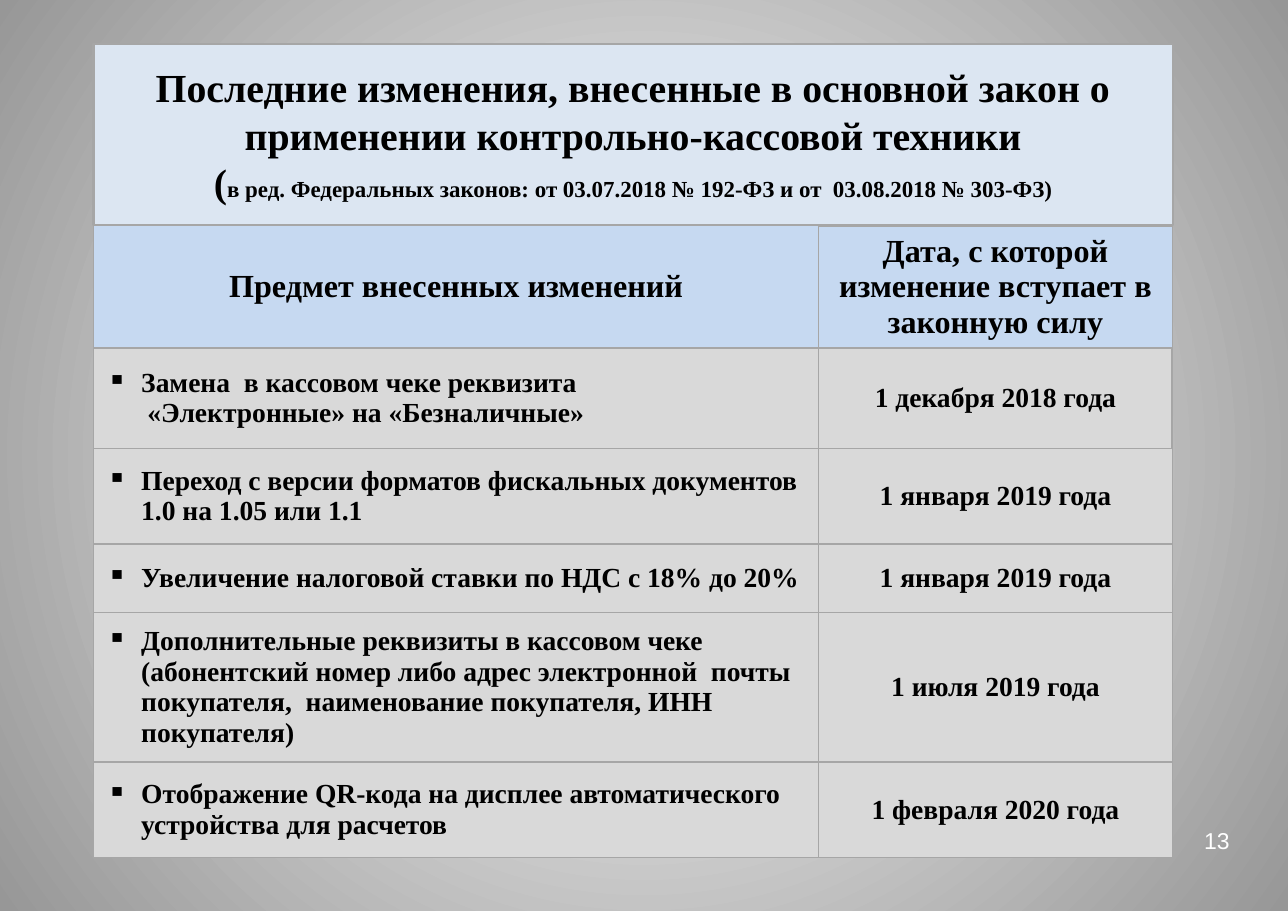
from pptx import Presentation
from pptx.dml.color import RGBColor as Rgb
from pptx.enum.shapes import MSO_SHAPE as Kind
from pptx.enum.text import MSO_ANCHOR as Anchor, PP_ALIGN as Align
from pptx.oxml.ns import qn
from pptx.util import Pt
from lxml.etree import SubElement as Sub

HEX = {"title": "DCE6F2", "head": "C6D9F1", "body": "D9D9D9", "edge": "A6A6A6",
       "text": "000000", "page": "FFFFFF", "core": "FFFFFF", "rim": "979797"}
SERIF, SANS = "Times New Roman", "Arial"
TITLE = "Последние изменения, внесенные в основной закон о применении контрольно-кассовой техники"
LAWS = "в ред. Федеральных законов: от 03.07.2018 № 192-ФЗ и от  03.08.2018 № 303-ФЗ)"
PAGE = "13"
HEAD = ("Предмет внесенных изменений", "Дата, с которой изменение вступает в законную силу")
ROWS = [
    (["Замена  в кассовом чеке реквизита", "«Электронные» на «Безналичные»"],
     "1 декабря 2018 года"),
    (["Переход с версии форматов фискальных документов 1.0 на 1.05 или 1.1"],
     "1 января 2019 года"),
    (["Увеличение налоговой ставки по НДС с 18% до 20%"], "1 января 2019 года"),
    (["Дополнительные реквизиты в кассовом чеке (абонентский номер либо адрес электронной  "
      "почты покупателя,  наименование покупателя, ИНН покупателя)"], "1 июля 2019 года"),
    (["Отображение QR-кода на дисплее автоматического устройства для расчетов"],
     "1 февраля 2020 года"),
]
COLS = (473.8, 231.1)
HIGH = (62.6, 65.5, 62.6, 44.6, 97.9, 62.6)
BOLD = {(0, 1): "T", (1, 1): "R"}
LEFT, TOP, WIDE, TALL = 61.2, 28.8, 705.6, 118.1
HANG, SHIFT = 22.5, 26.6


def color(name):
    return Rgb.from_string(HEX[name])


def add_run(para, text, size, face=SERIF, tone="text", bold=True):
    run = para.add_run()
    run.text = text
    font = run.font
    font.size, font.name, font.bold = Pt(size), face, bold
    font.color.rgb = color(tone)


def indent(para, left, first=0, mark=None):
    props = para._p.get_or_add_pPr()
    props.set("marL", str(Pt(left)))
    props.set("indent", str(Pt(first)))
    if mark:
        Sub(props, qn("a:buChar"), char=mark)


def style(cell, tone, thick):
    cell.vertical_anchor = Anchor.MIDDLE
    cell.margin_left = cell.margin_right = Pt(8.6)
    cell.margin_top = cell.margin_bottom = Pt(5)
    props = cell._tc.get_or_add_tcPr()
    for side in "LRTB":
        line = Sub(props, qn("a:ln" + side), w=str(Pt(1.5 if side == thick else 1)))
        Sub(Sub(line, qn("a:solidFill")), qn("a:srgbClr"), val=HEX["edge"])
    cell.fill.solid()
    cell.fill.fore_color.rgb = color(tone)


def fill_cell(cell, lines, size, center):
    frame = cell.text_frame
    for i, text in enumerate(lines):
        para = frame.add_paragraph() if i else frame.paragraphs[0]
        if center:
            para.alignment = Align.CENTER
        elif i:
            indent(para, SHIFT)
        else:
            indent(para, HANG, -HANG, "▪")
        add_run(para, text, size)


def add_back(slide):
    fill = slide.background.fill
    fill.gradient()
    for stop, tone in zip(fill.gradient_stops, ("core", "rim")):
        stop.color.rgb = color(tone)
    grad = slide.background._cSld.find(".//" + qn("a:gradFill"))
    grad.remove(grad.find(qn("a:lin")))
    ring = Sub(grad, qn("a:path"), path="circle")
    Sub(ring, qn("a:fillToRect"), {side: "50000" for side in "ltrb"})


def add_grid(slide):
    grid = slide.shapes.add_table(len(HIGH), len(COLS), Pt(LEFT), Pt(TOP + TALL + 0.7),
                                  Pt(WIDE), Pt(sum(HIGH))).table
    grid.first_row = grid.horz_banding = False
    for col, wide in zip(grid.columns, COLS):
        col.width = Pt(wide)
    for row, high in zip(grid.rows, HIGH):
        row.height = Pt(high)
    table = [([HEAD[0]], HEAD[1])] + ROWS
    for r, (lines, date) in enumerate(table):
        for c, part in enumerate((lines, [date])):
            cell = grid.cell(r, c)
            style(cell, "body" if r else "head", BOLD.get((r, c)))
            fill_cell(cell, part, 18 if r else 21, c == 1 or r == 0)


def add_title(slide):
    box = slide.shapes.add_shape(Kind.RECTANGLE, Pt(LEFT), Pt(TOP), Pt(WIDE), Pt(TALL))
    box.shadow.inherit = False
    box.fill.solid()
    box.fill.fore_color.rgb = color("title")
    box.line.color.rgb = color("edge")
    box.line.width = Pt(1.5)
    frame = box.text_frame
    frame.word_wrap = True
    frame.vertical_anchor = Anchor.MIDDLE
    para = frame.paragraphs[0]
    para.alignment = Align.CENTER
    add_run(para, TITLE, 26)
    para.add_line_break()
    add_run(para, "(", 26)
    add_run(para, LAWS, 15)


def add_page(slide):
    frame = slide.shapes.add_textbox(Pt(766.8), Pt(524.2), Pt(56.9), Pt(54.7)).text_frame
    frame.word_wrap = True
    frame.vertical_anchor = Anchor.MIDDLE
    para = frame.paragraphs[0]
    para.alignment = Align.CENTER
    para.line_spacing = Pt(13.8)
    add_run(para, PAGE, 15, SANS, "page", False)


def main():
    deck = Presentation()
    deck.slide_width, deck.slide_height = Pt(841.7), Pt(595.4)
    slide = deck.slides.add_slide(deck.slide_layouts[6])
    add_back(slide)
    add_grid(slide)
    add_title(slide)
    add_page(slide)
    deck.save("out.pptx")


if __name__ == "__main__":
    main()
